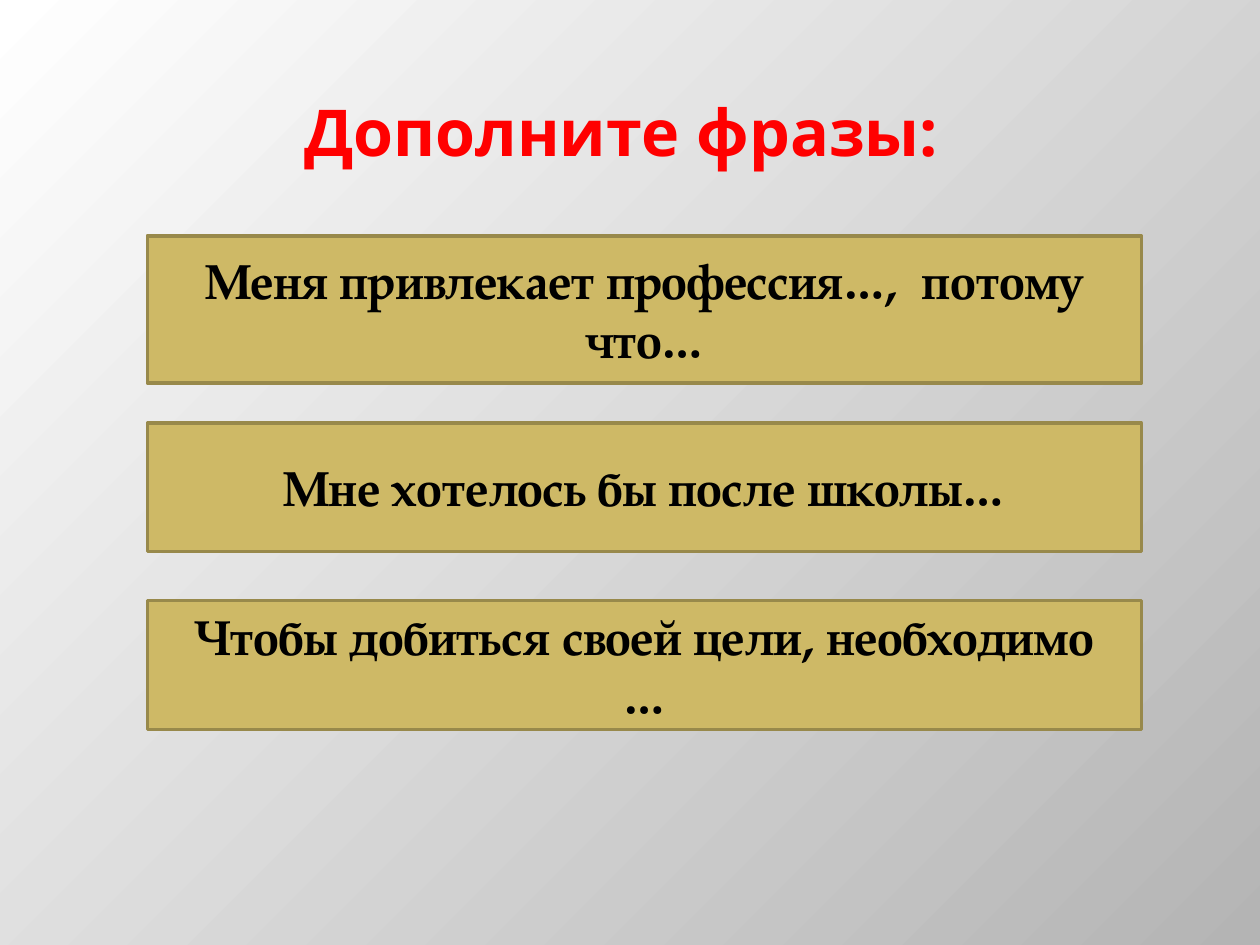
from pptx import Presentation
from pptx.dml.color import RGBColor
from pptx.enum.shapes import MSO_SHAPE
from pptx.enum.text import MSO_ANCHOR, PP_ALIGN
from pptx.util import Pt

RECTANGLE = MSO_SHAPE.RECTANGLE
MIDDLE = MSO_ANCHOR.MIDDLE
CENTER = PP_ALIGN.CENTER

COLORS = {
    "heading": "FF0000",
    "phrase": "000000",
    "card": "CEB966",
    "border": "98894B",
    "light": "FFFFFF",
    "dark": "B4B4B4",
}
HEADING_FONT = "Noto Sans"
PHRASE_FONT = "TeX Gyre Pagella"
CARD_LEFT, CARD_WIDTH = 84.25, 568
PHRASES = [
    (134.75, 84.25, ["Меня привлекает профессия…,  потому что…"]),
    (241.75, 73.5, ["Мне хотелось бы после школы…"]),
    (343.25, 73.5, ["Чтобы добиться своей цели, необходимо", "…"]),
]


def color(name):
    """Return the named colour."""
    return RGBColor.from_string(COLORS[name])


def paint_background(slide):
    """Shade the slide diagonally from top left to bottom right."""
    fill = slide.background.fill
    fill.gradient()
    fill.gradient_angle = 315
    for stop, position, shade in zip(fill.gradient_stops, (0, 1), ("light", "dark")):
        stop.position = position
        stop.color.rgb = color(shade)


def write_lines(frame, lines, font_name, size, shade):
    """Write centred bold paragraphs into a text frame."""
    frame.word_wrap = True
    frame.vertical_anchor = MIDDLE
    for index, line in enumerate(lines):
        paragraph = frame.add_paragraph() if index else frame.paragraphs[0]
        paragraph.alignment = CENTER
        run = paragraph.add_run()
        run.text = line
        run.font.name = font_name
        run.font.size = Pt(size)
        run.font.bold = True
        run.font.color.rgb = color(shade)


def add_heading(slide, text):
    """Add the heading, raised within its box by the bottom inset."""
    heading = slide.shapes.add_textbox(Pt(36), Pt(67.5), Pt(648), Pt(56.25))
    frame = heading.text_frame
    frame.margin_top = Pt(0)
    frame.margin_bottom = Pt(42)
    write_lines(frame, [text], HEADING_FONT, 36.9, "heading")


def add_phrase_card(slide, top, height, lines):
    """Add a bordered card holding one unfinished phrase."""
    card = slide.shapes.add_shape(
        RECTANGLE, Pt(CARD_LEFT), Pt(top), Pt(CARD_WIDTH), Pt(height)
    )
    card.shadow.inherit = False
    card.fill.solid()
    card.fill.fore_color.rgb = color("card")
    card.line.color.rgb = color("border")
    card.line.width = Pt(2)
    write_lines(card.text_frame, lines, PHRASE_FONT, 28, "phrase")


def main():
    """Build the slide and save it."""
    presentation = Presentation()
    presentation.slide_width = Pt(720)
    presentation.slide_height = Pt(540)
    slide = presentation.slides.add_slide(presentation.slide_layouts[6])
    paint_background(slide)
    add_heading(slide, "Дополните фразы: ")
    for top, height, lines in PHRASES:
        add_phrase_card(slide, top, height, lines)
    presentation.save("out.pptx")


if __name__ == "__main__":
    main()
